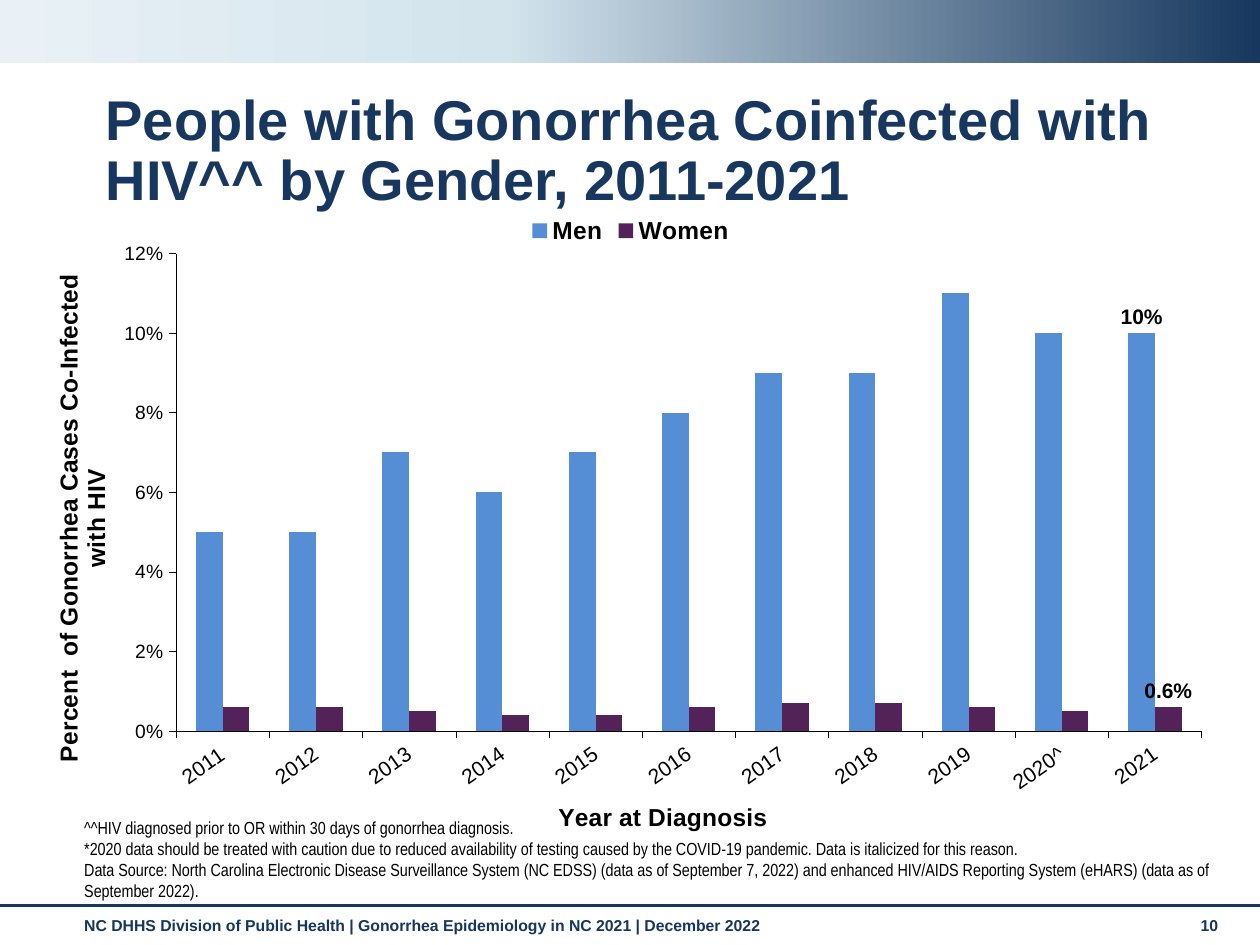
from lxml import etree
from pptx import Presentation
from pptx.chart.data import CategoryChartData
from pptx.dml.color import RGBColor
from pptx.enum.chart import XL_CHART_TYPE, XL_LABEL_POSITION, XL_LEGEND_POSITION, XL_TICK_MARK
from pptx.enum.shapes import MSO_CONNECTOR, MSO_SHAPE
from pptx.enum.text import MSO_ANCHOR
from pptx.oxml import parse_xml
from pptx.oxml.ns import nsdecls, qn
from pptx.util import Inches, Pt

COLUMNS = XL_CHART_TYPE.COLUMN_CLUSTERED
OUTSIDE_END = XL_LABEL_POSITION.OUTSIDE_END
LEGEND_TOP = XL_LEGEND_POSITION.TOP
TICK_OUT, TICK_NONE = XL_TICK_MARK.OUTSIDE, XL_TICK_MARK.NONE
STRAIGHT = MSO_CONNECTOR.STRAIGHT
RECTANGLE = MSO_SHAPE.RECTANGLE
TOP, BOTTOM = MSO_ANCHOR.TOP, MSO_ANCHOR.BOTTOM

NAVY, BLACK = "17375E", "000000"
FOOTER_NAVY = "15365E"
YEARS = [str(year) for year in range(2011, 2020)] + ["2020^", "2021"]
# name, colour, label format, values
SERIES = [
    ("Men", "558ED5", "0%",
     [0.05, 0.05, 0.07, 0.06, 0.07, 0.08, 0.09, 0.09, 0.11, 0.1, 0.1]),
    ("Women", "522258", "0.0%",
     [0.006, 0.006, 0.005, 0.004, 0.004, 0.006, 0.007, 0.007, 0.006, 0.005, 0.006]),
]
FOOTNOTES = [
    "^^HIV diagnosed prior to OR within 30 days of gonorrhea diagnosis.",
    "*2020 data should be treated with caution due to reduced availability of testing "
    "caused by the COVID-19 pandemic. Data is italicized for this reason.",
    "Data Source: North Carolina Electronic Disease Surveillance System (NC EDSS) "
    "(data as of September 7, 2022) and enhanced HIV/AIDS Reporting System (eHARS) "
    "(data as of September 2022).",
]


def colour(hex_text):
    return RGBColor.from_string(hex_text)


def set_font(font, size, hex_text=BLACK, bold=False, name="Arial"):
    font.name = name
    font.size = Pt(size)
    font.bold = bold
    font.color.rgb = colour(hex_text)


def rotate_text(element, degrees):
    """Turn the text of a chart part; negative is anticlockwise."""
    body = next(element.iter(qn("a:bodyPr")))
    body.set("rot", str(degrees * 60000))
    body.set("vert", "horz")


class SlideBuilder:
    def __init__(self, page):
        self.page = page

    def text(self, place, paragraphs, size, hex_text=NAVY, bold=True,
             name="Arial", anchor=TOP, line_spacing=None):
        box = self.page.shapes.add_textbox(*map(Inches, place))
        frame = box.text_frame
        frame.word_wrap = True
        frame.vertical_anchor = anchor
        frame.text = "\n".join(paragraphs)
        for para in frame.paragraphs:
            para.line_spacing = line_spacing
            for span in para.runs:
                set_font(span.font, size, hex_text, bold, name)

    def gradient_band(self, place, stops, angle):
        band = self.page.shapes.add_shape(RECTANGLE, *map(Inches, place))
        band.shadow.inherit = False
        band.line.fill.background()
        band.fill.gradient()
        band.fill.gradient_angle = angle
        stop_list = next(band._element.iter(qn("a:gsLst")))
        for old_stop in list(stop_list):
            stop_list.remove(old_stop)
        for percent, hex_text in stops:
            stop = etree.SubElement(stop_list, qn("a:gs"), pos=str(percent * 1000))
            etree.SubElement(stop, qn("a:srgbClr"), val=hex_text)

    def rule(self, start, end, hex_text, width):
        line = self.page.shapes.add_connector(STRAIGHT, *map(Inches, start + end))
        line.line.color.rgb = colour(hex_text)
        line.line.width = Pt(width)
        etree.SubElement(line._element.spPr, qn("a:effectLst"))

    def column_chart(self, place, plot_area):
        data = CategoryChartData()
        data.categories = YEARS
        for name, _, _, values in SERIES:
            data.add_series(name, values)
        chart = self.page.shapes.add_chart(COLUMNS, *map(Inches, place), data).chart
        set_font(chart.font, 12, bold=True)
        chart.has_title = False
        chart.has_legend = True
        chart.legend.position = LEGEND_TOP
        chart.legend.include_in_layout = False
        set_font(chart.legend.font, 14, bold=True)

        plot = chart.plots[0]
        plot.gap_width = 150
        plot.overlap = 0
        plot.vary_by_categories = False
        for series, (_, fill, number_format, _) in zip(plot.series, SERIES):
            series.format.fill.solid()
            series.format.fill.fore_color.rgb = colour(fill)
            self.label_last_point(series, number_format)

        self.axis(chart.category_axis, "Year at Diagnosis", 12)
        rotate_text(chart.category_axis.tick_labels._element.find(qn("c:txPr")), -35)
        value_axis = chart.value_axis
        self.axis(value_axis, "Percent  of Gonorrhea Cases Co-Infected with HIV", 11)
        rotate_text(value_axis.axis_title._element, -90)
        value_axis.minimum_scale, value_axis.maximum_scale = 0, 0.12
        value_axis.major_unit = 0.02
        value_axis.tick_labels.number_format = "0%"
        value_axis.tick_labels.number_format_is_linked = False
        self.place_plot(chart, plot_area)

    def axis(self, axis, title, size):
        axis.has_major_gridlines = False
        axis.major_tick_mark, axis.minor_tick_mark = TICK_OUT, TICK_NONE
        axis.format.line.color.rgb = colour(BLACK)
        axis.format.line.width = Pt(0.25)
        set_font(axis.tick_labels.font, size)
        axis.axis_title.text_frame.text = title
        set_font(axis.axis_title.text_frame.paragraphs[0].runs[0].font, 14, bold=True)

    def label_last_point(self, series, number_format):
        labels = series.data_labels
        labels.show_value = True
        labels.number_format = number_format
        labels.number_format_is_linked = False
        labels.position = OUTSIDE_END
        set_font(labels.font, 12, bold=True)
        for index in range(len(YEARS) - 1):
            labels._element.insert(index, parse_xml(
                f'<c:dLbl {nsdecls("c")}><c:idx val="{index}"/>'
                '<c:delete val="1"/></c:dLbl>'))

    def place_plot(self, chart, plot_area):
        """Fix the inner plot area, given as shares of the chart's size."""
        area = next(chart._chartSpace.iter(qn("c:plotArea")))
        for old_layout in area.findall(qn("c:layout")):
            area.remove(old_layout)
        layout = etree.Element(qn("c:layout"))
        manual = etree.SubElement(layout, qn("c:manualLayout"))
        settings = [("layoutTarget", "inner"), ("xMode", "edge"), ("yMode", "edge")]
        for tag, value in settings + list(zip("xywh", plot_area)):
            etree.SubElement(manual, qn("c:" + tag), val=str(value))
        area.insert(0, layout)


def main():
    deck = Presentation()
    deck.slide_width, deck.slide_height = Inches(10), Inches(7.5)
    builder = SlideBuilder(deck.slides.add_slide(deck.slide_layouts[6]))

    builder.text((0.57, 7.22, 8.74, 0.29),
                 ["NC DHHS Division of Public Health | Gonorrhea Epidemiology in NC 2021 "
                  "| December 2022"], 9, FOOTER_NAVY)
    builder.text((9.43, 7.22, 0.44, 0.3), ["10"], 9, FOOTER_NAVY)
    builder.gradient_band((0, 0, 10, 0.5),
                          [(0, NAVY), (60, "D3E4ED"), (100, "E9F1F6")], 180)
    builder.rule((0, 7.19), (10, 7.19), NAVY, 1.75)
    builder.text((0.74, 0.68, 9.13, 0.6),
                 ["People with Gonorrhea Coinfected with HIV^^ by Gender, 2011-2021"],
                 32, line_spacing=0.9)
    builder.text((0.57, 6.99, 9.29, 0.21), FOOTNOTES, 10, BLACK, bold=False,
                 name="Arial Narrow", anchor=BOTTOM)
    builder.column_chart((0.38, 1.61, 9.25, 5.05), (0.11, 0.08, 0.88, 0.75))
    deck.save("out.pptx")


if __name__ == "__main__":
    main()
